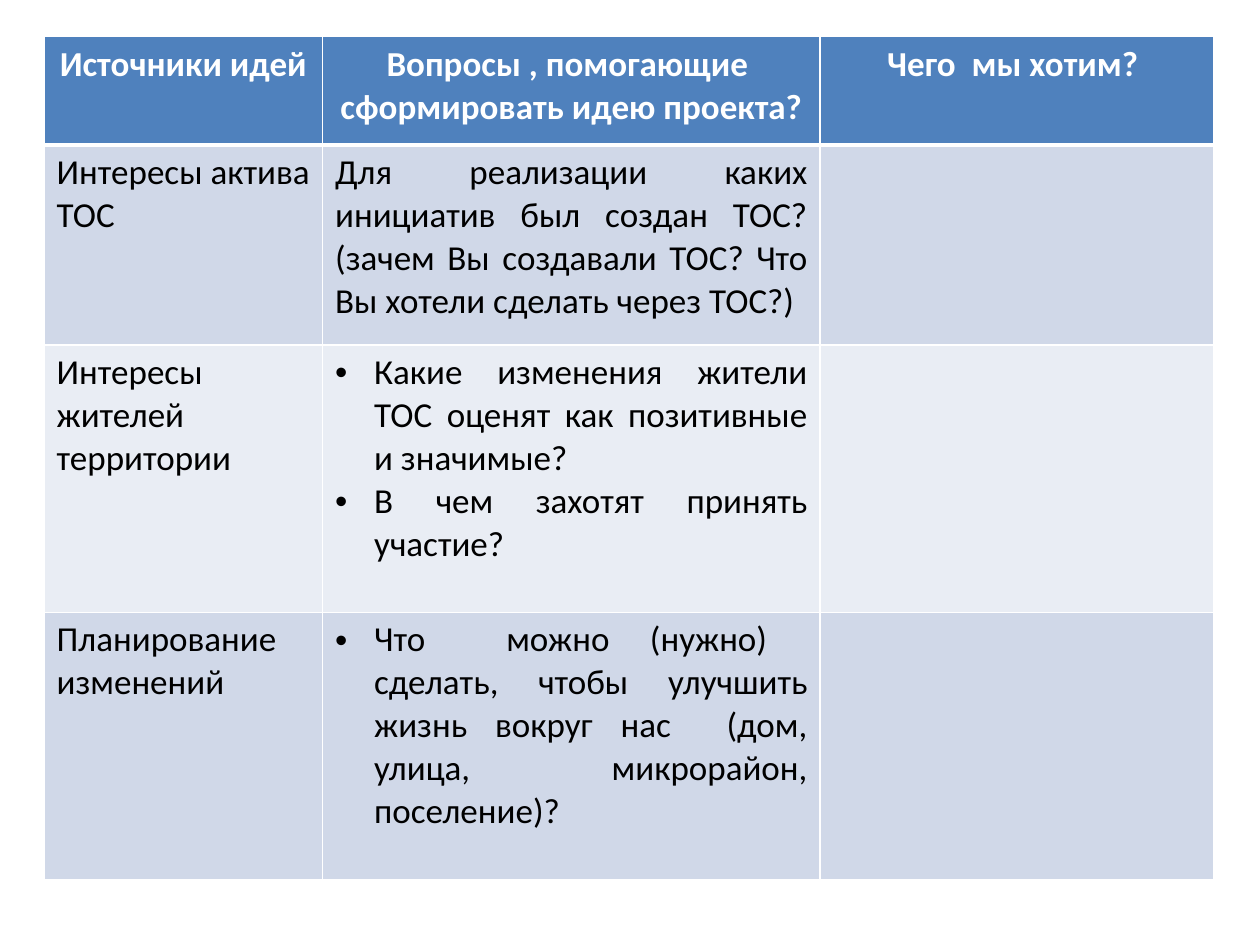
from lxml import etree
from pptx import Presentation
from pptx.dml.color import RGBColor
from pptx.enum.text import PP_ALIGN
from pptx.oxml.ns import qn
from pptx.util import Inches, Pt

CENTER, JUSTIFY = PP_ALIGN.CENTER, PP_ALIGN.JUSTIFY
COLORS = {
    "header": "4F81BD",
    "odd": "D0D8E8",
    "even": "E9EDF4",
    "line": "FFFFFF",
    "heading": "FFFFFF",
    "body": "000000",
}
WIDTH, HEIGHT = 10, 7.5
COLUMNS = [0.221, 0.395, 0.312]
ROWS = [0.86 / HEIGHT, 1.59 / HEIGHT, 2.12 / HEIGHT, 2.12 / HEIGHT]

HEADINGS = [
    "Источники идей",
    "Вопросы , помогающие  сформировать идею проекта?",
    "Чего  мы хотим? ",
]
IDEA_SOURCES = [
    ("Интересы актива ТОС", [
        "Для реализации каких инициатив был создан ТОС? "
        "(зачем Вы создавали ТОС? Что Вы хотели сделать через ТОС?)",
    ], False),
    ("Интересы жителей территории", [
        "Какие изменения жители ТОС оценят как позитивные и значимые? ",
        "В чем захотят принять участие?",
    ], True),
    ("Планирование изменений", [
        "Что  можно (нужно)  сделать, чтобы улучшить жизнь вокруг нас  "
        "(дом, улица, микрорайон, поселение)?",
    ], True),
]


class IdeaSlide:
    """Draws tables on a slide in one style, with lengths as shares of it."""

    font = "Calibri"
    size = Pt(20)
    indent = Inches(0.31)

    def __init__(self, deck):
        self.width, self.height = deck.slide_width, deck.slide_height
        self.slide = deck.slides.add_slide(deck.slide_layouts[6])

    def table(self, left, top, columns, rows):
        frame = self.slide.shapes.add_table(
            len(rows), len(columns),
            int(left * self.width), int(top * self.height),
            int(sum(columns) * self.width), int(sum(rows) * self.height))
        for column, share in zip(frame.table.columns, columns):
            column.width = int(share * self.width)
        for row, share in zip(frame.table.rows, rows):
            row.height = int(share * self.height)
        return frame.table

    def borders(self, cell, top, bottom):
        properties = cell._tc.get_or_add_tcPr()
        for side, points in (("L", 1), ("R", 1), ("T", top), ("B", bottom)):
            line = etree.SubElement(properties, qn(f"a:ln{side}"), w=str(Pt(points)))
            fill = etree.SubElement(line, qn("a:solidFill"))
            etree.SubElement(fill, qn("a:srgbClr"), val=COLORS["line"])

    def bullet(self, paragraph):
        properties = paragraph._p.get_or_add_pPr()
        properties.set("marL", str(self.indent))
        properties.set("indent", str(-self.indent))
        etree.SubElement(properties, qn("a:buFont"), typeface="Arial")
        etree.SubElement(properties, qn("a:buChar"), char="•")

    def cell(self, cell, texts, fill, heading=False, bulleted=False, top=1, bottom=1):
        self.borders(cell, top, bottom)
        cell.fill.solid()
        cell.fill.fore_color.rgb = RGBColor.from_string(COLORS[fill])
        for index, text in enumerate(texts):
            frame = cell.text_frame
            paragraph = frame.add_paragraph() if index else frame.paragraphs[0]
            paragraph.alignment = CENTER if heading else JUSTIFY
            if bulleted:
                self.bullet(paragraph)
            run = paragraph.add_run()
            run.text = text
            run.font.name, run.font.size, run.font.bold = self.font, self.size, heading
            ink = COLORS["heading" if heading else "body"]
            run.font.color.rgb = RGBColor.from_string(ink)


def main():
    deck = Presentation()
    deck.slide_width, deck.slide_height = Inches(WIDTH), Inches(HEIGHT)
    slide = IdeaSlide(deck)
    ideas = slide.table(0.035, 0.29 / HEIGHT, COLUMNS, ROWS)
    for column, heading in enumerate(HEADINGS):
        slide.cell(ideas.cell(0, column), [heading], "header", heading=True, bottom=3)
    for row, (source, questions, bulleted) in enumerate(IDEA_SOURCES, 1):
        band = "odd" if row % 2 else "even"
        top = 3 if row == 1 else 1
        slide.cell(ideas.cell(row, 0), [source], band, top=top)
        slide.cell(ideas.cell(row, 1), questions, band, bulleted=bulleted, top=top)
        slide.cell(ideas.cell(row, 2), [], band, top=top)
    deck.save("out.pptx")


if __name__ == "__main__":
    main()
